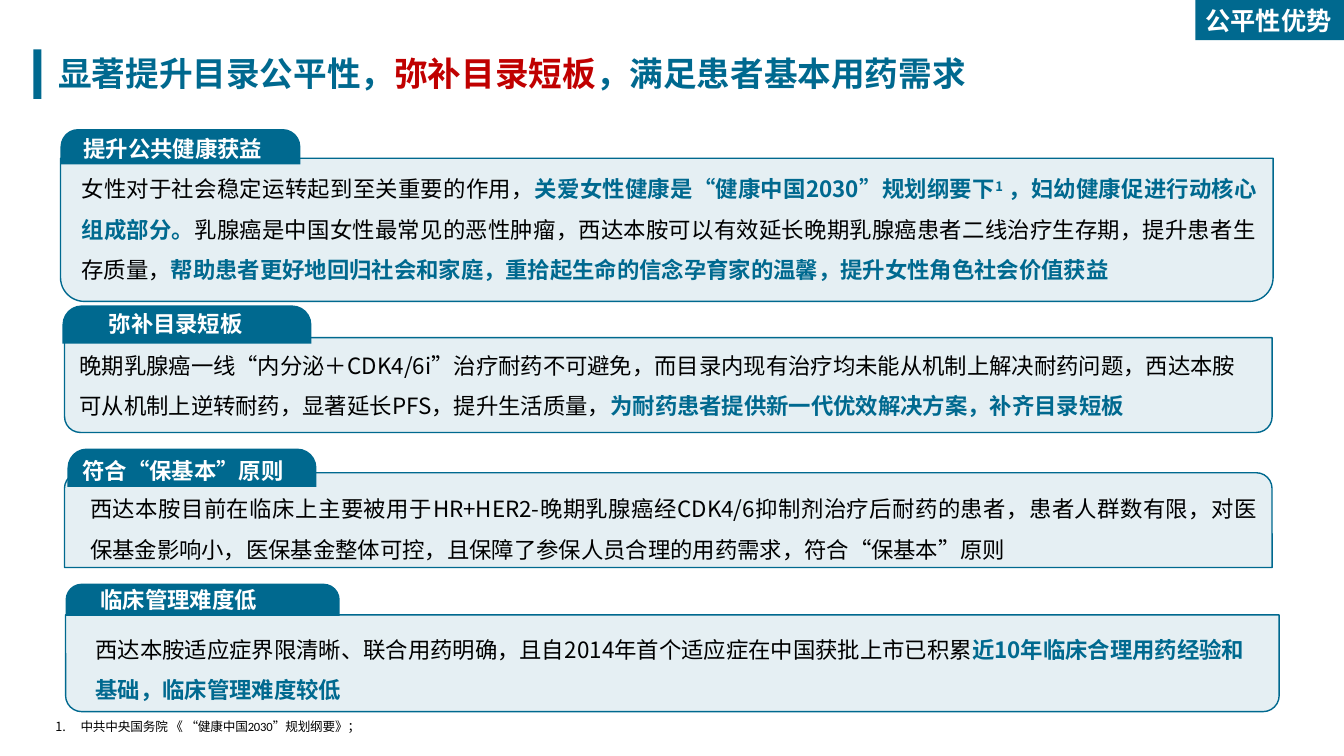
from lxml.etree import SubElement
from pptx import Presentation
from pptx.dml.color import RGBColor
from pptx.enum.shapes import MSO_SHAPE as Preset
from pptx.enum.text import MSO_ANCHOR as Anchor, MSO_AUTO_SIZE as AutoSize, PP_ALIGN as Align
from pptx.oxml.ns import qn
from pptx.util import Inches, Pt

TEAL, RED, BLACK, WHITE = (RGBColor.from_string(c) for c in ("00698F", "C00000", "000000", "FFFFFF"))
CJK = "Noto Sans CJK SC"
THEME = {
    "title": dict(size=Pt(24), bold=True, name=CJK, color=TEAL),
    "title_alert": dict(size=Pt(24), bold=True, name=CJK, color=RED),
    "badge": dict(size=Pt(18), bold=True, name=CJK, color=WHITE),
    "label": dict(size=Pt(16), bold=True, name=CJK, color=WHITE),
    "body": dict(size=Pt(16), bold=False, name=CJK, color=BLACK),
    "strong": dict(size=Pt(16), bold=True, name=CJK, color=TEAL),
    "superscript": dict(size=Pt(16), bold=True, name=CJK, color=TEAL),
    "note": dict(size=Pt(9), bold=False, name="Calibri", color=BLACK),
}
RUN_XML = {"superscript": ("baseline", "29000"), "note": ("spc", "-10")}

prs = Presentation()
prs.slide_width, prs.slide_height = Inches(13.33), Inches(7.5)
slide = prs.slides.add_slide(prs.slide_layouts[6])
COLUMN, ROW = prs.slide_width / 40, prs.slide_height / 22.5


def block(preset, area, opacity=None):
    """Add a teal shape, or a text box if preset is None; area is in columns and rows."""
    left, top, width, height = (int(n * unit) for n, unit in zip(area, (COLUMN, ROW) * 2))
    if preset is None:
        return slide.shapes.add_textbox(left, top, width, height)
    shape = slide.shapes.add_shape(preset, left, top, width, height)
    shape.shadow.inherit = False
    shape.fill.solid()
    shape.fill.fore_color.rgb = TEAL
    if opacity is None:
        shape.line.fill.background()
    else:
        shape.line.color.rgb, shape.line.width = TEAL, Pt(1)
        tint = shape._element.spPr.find(qn("a:solidFill")).find(qn("a:srgbClr"))
        SubElement(tint, qn("a:alpha"), val=str(opacity * 1000))
    return shape


def write(holder, runs, align=Align.LEFT, spacing=None, margin=0, hanging=0,
          numbered=False, anchor=Anchor.TOP, fit=AutoSize.SHAPE_TO_FIT_TEXT, wrap=True):
    """Fill a shape with one paragraph of (text, style) runs."""
    frame = holder.text_frame
    paragraph = frame.paragraphs[0]
    for target, values in (
        (frame, dict(word_wrap=wrap, auto_size=fit, vertical_anchor=anchor)),
        (paragraph, dict(alignment=align, line_spacing=spacing)),
    ):
        for key, value in values.items():
            setattr(target, key, value)
    properties = paragraph._p.get_or_add_pPr()
    properties.set("marL", str(Inches(margin)))
    properties.set("indent", str(Inches(-hanging)))
    if numbered:
        SubElement(properties, qn("a:buFont"), typeface="+mj-lt")
        SubElement(properties, qn("a:buAutoNum"), type="arabicPeriod")
    for text, style in runs:
        run = paragraph.add_run()
        run.text = text
        for key, value in THEME[style].items():
            if key == "color":
                run.font.color.rgb = value
            else:
                setattr(run.font, key, value)
        run_properties = run._r.get_or_add_rPr()
        SubElement(run_properties, qn("a:ea"), typeface=CJK)
        if style in RUN_XML:
            run_properties.set(*RUN_XML[style])


# Heading
block(Preset.RECTANGLE, (0.99, 1.47, 0.24, 1.47))
write(block(None, (1.44, 1.44, 29.07, 1.5)), [
    ("显著提升目录公平性，", "title"),
    ("弥补目录短板", "title_alert"),
    ("，满足患者基本用药需求", "title"),
])
write(block(Preset.RECTANGLE, (35.58, 0, 4.44, 1.2)), [("公平性优势", "badge")])

# Sections: a section without a body area keeps its text inside the panel
sections = [
    dict(
        panel=(1.8, 4.71, 36.09, 4.26), tab=(1.8, 3.84, 7.14, 1.05),
        label=(2.19, 3.87, 6, 1.11), body=(1.8, 4.68, 35.91, 3.93),
        heading="提升公共健康获益", layout=dict(align=Align.JUSTIFY, margin=0.11),
        runs=[
            ("女性对于社会稳定运转起到至关重要的作用，", "body"),
            ("关爱女性健康是“健康中国2030”规划纲要下", "strong"),
            ("1", "superscript"),
            (" ，妇幼健康促进行动核心组成部分。", "strong"),
            ("乳腺癌是中国女性最常见的恶性肿瘤，西达本胺可以有效延长晚期乳腺癌患者二线治疗生存期，"
             "提升患者生存质量，", "body"),
            ("帮助患者更好地回归社会和家庭，重拾起生命的信念孕育家的温馨，"
             "提升女性角色社会价值获益", "strong"),
        ],
    ),
    dict(
        panel=(1.92, 10.05, 35.94, 2.82), tab=(1.86, 9.09, 7.41, 1.14),
        label=(2.94, 9.09, 4.83, 1.11), body=(2.04, 9.93, 35.64, 2.73),
        heading="弥补目录短板", layout=dict(margin=0.01),
        runs=[
            ("晚期乳腺癌一线“内分泌＋CDK4/6i”治疗耐药不可避免，而目录内现有治疗均未能从机制上解决"
             "耐药问题，西达本胺可从机制上逆转耐药，显著延长PFS，提升生活质量，", "body"),
            ("为耐药患者提供新一代优效解决方案，补齐目录短板", "strong"),
        ],
    ),
    dict(
        panel=(1.92, 14.07, 35.94, 2.82), tab=(2.01, 13.35, 7.41, 1.14),
        label=(2.16, 13.47, 8.16, 1.11), body=None,
        heading="符合“保基本”原则",
        layout=dict(align=Align.JUSTIFY, margin=0.11, anchor=Anchor.MIDDLE, fit=AutoSize.NONE),
        runs=[
            ("西达本胺目前在临床上主要被用于HR+HER2-晚期乳腺癌经CDK4/6抑制剂治疗后耐药的患者，"
             "患者人群数有限，对医保基金影响小，医保基金整体可控，且保障了参保人员合理的用药需求，"
             "符合“保基本”原则", "body"),
        ],
    ),
    dict(
        panel=(1.95, 18.3, 36.12, 2.88), tab=(1.95, 17.37, 8.16, 0.96),
        label=(2.7, 17.31, 6.09, 1.11), body=(2.52, 18.39, 35.16, 2.73),
        heading="临床管理难度低", layout=dict(margin=0.01),
        runs=[
            ("西达本胺适应症界限清晰、联合用药明确，且自2014年首个适应症在中国获批上市已积累", "body"),
            ("近10年临床合理用药经验和基础，临床管理难度较低", "strong"),
        ],
    ),
]
for section in sections:
    panel = block(Preset.ROUND_2_SAME_RECTANGLE, section["panel"], opacity=10)
    if section["body"]:
        panel.rotation = 180
    tab = block(Preset.ROUND_2_SAME_RECTANGLE, section["tab"])
    tab.adjustments[0], tab.adjustments[1] = 0.5, 0
    write(block(None, section["label"]), [(section["heading"], "label")],
          wrap=section is not sections[0])
    body = block(None, section["body"]) if section["body"] else panel
    write(body, section["runs"], spacing=1.5, **section["layout"])

# Reference
write(block(None, (1.35, 21.24, 22.92, 0.75)), [("中共中央国务院 《 “健康中国2030”规划纲要》；", "note")],
      align=Align.JUSTIFY, margin=0.25, hanging=0.25, numbered=True)

prs.save("out.pptx")
